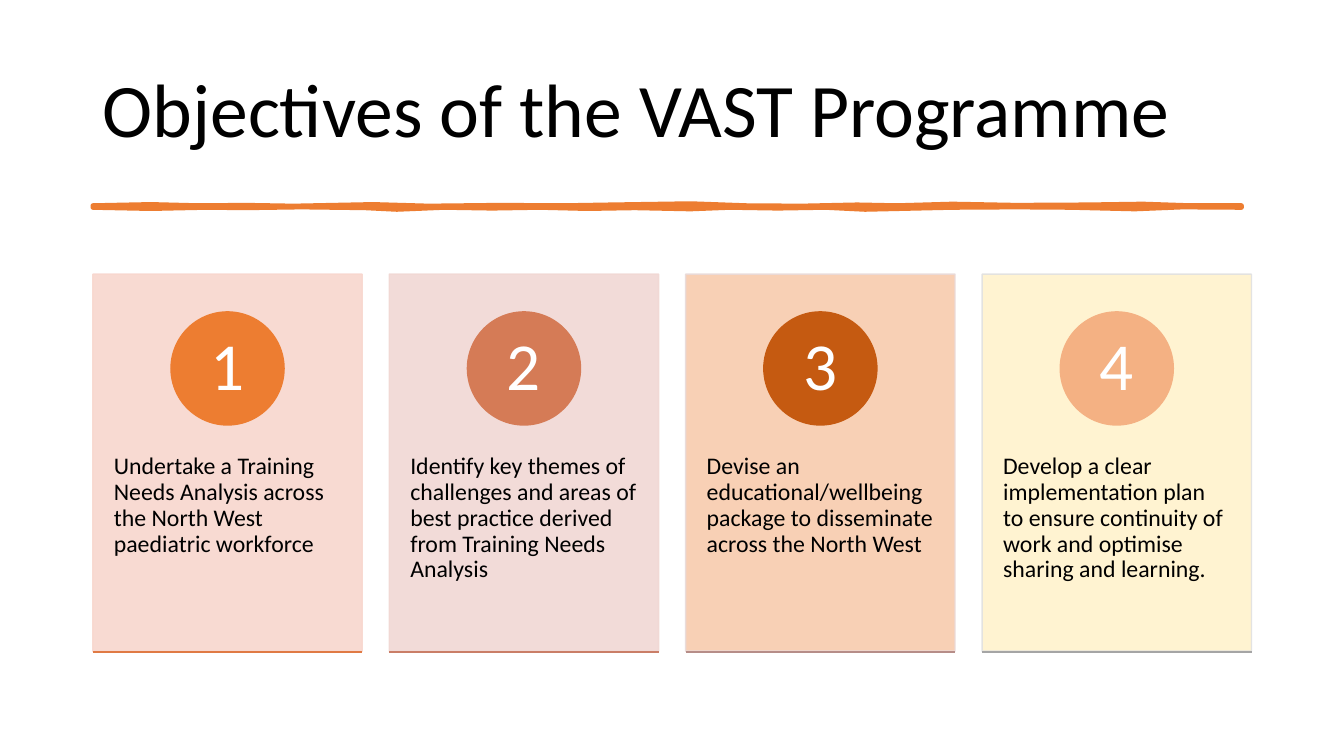
from lxml import etree
from pptx import Presentation
from pptx.dml.color import RGBColor
from pptx.enum.shapes import MSO_CONNECTOR, MSO_SHAPE
from pptx.enum.text import MSO_ANCHOR, PP_ALIGN
from pptx.oxml.ns import qn
from pptx.util import Cm, Pt

STRAIGHT = MSO_CONNECTOR.STRAIGHT
RECTANGLE = MSO_SHAPE.RECTANGLE
OVAL = MSO_SHAPE.OVAL
TOP = MSO_ANCHOR.TOP
MIDDLE = MSO_ANCHOR.MIDDLE
LEFT = PP_ALIGN.LEFT
CENTER = PP_ALIGN.CENTER

FONT = "Calibri"
MARGIN = 2.34
CARD_TOP = 6.91
CARD_WIDTH = 6.79
CARD_HEIGHT = 9.5
CARD_PITCH = 7.47
CIRCLE_SIZE = 2.85
NUMBER_SIZE = 2.02

CARDS = [
    ("Undertake a Training Needs Analysis across the North West paediatric workforce",
     "F8D7CE", "F8D7CE", "ED7D31", "E07A44"),
    ("Identify key themes of challenges and areas of best practice derived from "
     "Training Needs Analysis",
     "F1D8D4", "F1D8D4", "D57B56", "CA7E67"),
    ("Devise an educational/wellbeing package to disseminate across the North West",
     "F8CBAD", "E9DBDA", "C55A11", "B68D88"),
    ("Develop a clear implementation plan to ensure continuity of work and optimise "
     "sharing and learning.",
     "FFF2CC", "E1E1E1", "F4B183", "A5A5A5"),
]

BRUSH_TOP = [(2.34, 5.18), (3.8, 5.15), (5, 5.18), (6.2, 5.17), (7.4, 5.19),
             (9.4, 5.15), (10.8, 5.19), (12.6, 5.17), (14.2, 5.18), (15.4, 5.16),
             (17.4, 5.13), (18.8, 5.18), (20.2, 5.19), (21.6, 5.16), (22.6, 5.18),
             (24, 5.14), (25.6, 5.17), (27.4, 5.16), (28.8, 5.14), (30, 5.18), (31.29, 5.18)]
BRUSH_BOTTOM = [(31.29, 5.23), (29.8, 5.22), (28.6, 5.27), (27, 5.23), (25.6, 5.22),
                (24, 5.23), (21.8, 5.28), (20.8, 5.23), (19.6, 5.25), (18.4, 5.23),
                (17.4, 5.27), (16, 5.24), (14.8, 5.26), (13.6, 5.23), (12.4, 5.25),
                (11.2, 5.23), (10, 5.28), (9.2, 5.24), (7.6, 5.22), (6.2, 5.24),
                (5.2, 5.23), (3.8, 5.26), (2.34, 5.23)]


def color(value):
    return RGBColor.from_string(value)


def paint(shape, fill, line, line_width=1, opacity=100):
    shape.shadow.inherit = False
    shape.fill.solid()
    shape.fill.fore_color.rgb = color(fill)
    shape.line.color.rgb = color(line)
    shape.line.width = Pt(line_width)
    if opacity < 100:
        for tone in shape._element.spPr.iter(qn("a:srgbClr")):
            etree.SubElement(tone, qn("a:alpha"), val=str(opacity * 1000))


def add_text(page, area, text, size, ink, anchor, alignment, insets):
    box = page.shapes.add_textbox(*map(Cm, area))
    frame = box.text_frame
    frame.word_wrap = True
    frame.vertical_anchor = anchor
    frame.margin_left = frame.margin_right = Cm(insets[0])
    frame.margin_top = frame.margin_bottom = Cm(insets[1])
    frame.text = text
    para = frame.paragraphs[0]
    para.alignment = alignment
    para.line_spacing = 0.9
    span = para.runs[0]
    span.font.name = FONT
    span.font.size = Pt(size)
    span.font.color.rgb = color(ink)


def add_brush_stroke(page):
    outline = [(Cm(x), Cm(y)) for x, y in BRUSH_TOP + BRUSH_BOTTOM]
    builder = page.shapes.build_freeform(*outline[0])
    builder.add_line_segments(outline[1:], close=True)
    paint(builder.convert_to_shape(), "ED7D31", "ED7D31", 3.25)


def add_rule(page, left, top, width, ink):
    rule = page.shapes.add_connector(STRAIGHT, Cm(left), Cm(top), Cm(left + width), Cm(top))
    rule.line.color.rgb = color(ink)
    rule.line.width = Pt(1)
    etree.SubElement(rule._element.spPr, qn("a:effectLst"))


def add_card(page, index, text, fill, border, circle_fill, rule_color):
    left = MARGIN + index * CARD_PITCH
    card = page.shapes.add_shape(
        RECTANGLE, Cm(left), Cm(CARD_TOP), Cm(CARD_WIDTH), Cm(CARD_HEIGHT))
    paint(card, fill, border, opacity=90)
    add_text(page, (left, 10.54, CARD_WIDTH, 5.72), text, 17, "000000",
             TOP, LEFT, (0.53, 0.91))

    circle_left = left + (CARD_WIDTH - CIRCLE_SIZE) / 2
    circle_top = CARD_TOP + 0.95
    circle = page.shapes.add_shape(
        OVAL, Cm(circle_left), Cm(circle_top), Cm(CIRCLE_SIZE), Cm(CIRCLE_SIZE))
    paint(circle, circle_fill, circle_fill)
    inset = (CIRCLE_SIZE - NUMBER_SIZE) / 2
    add_text(page, (circle_left + inset, circle_top + inset, NUMBER_SIZE, NUMBER_SIZE),
             str(index + 1), 48, "FFFFFF", MIDDLE, CENTER, (0.22, 0.03))
    add_rule(page, left, CARD_TOP + CARD_HEIGHT + 0.02, CARD_WIDTH, rule_color)


def main():
    deck = Presentation()
    deck.slide_width = Cm(33.87)
    deck.slide_height = Cm(19.05)
    page = deck.slides.add_slide(deck.slide_layouts[6])
    add_text(page, (MARGIN, 1.02, 29.21, 3.68), "Objectives of the VAST Programme",
             54, "000000", MIDDLE, LEFT, (0.25, 0.13))
    add_brush_stroke(page)
    for index, card in enumerate(CARDS):
        add_card(page, index, *card)
    deck.save("out.pptx")


if __name__ == "__main__":
    main()
